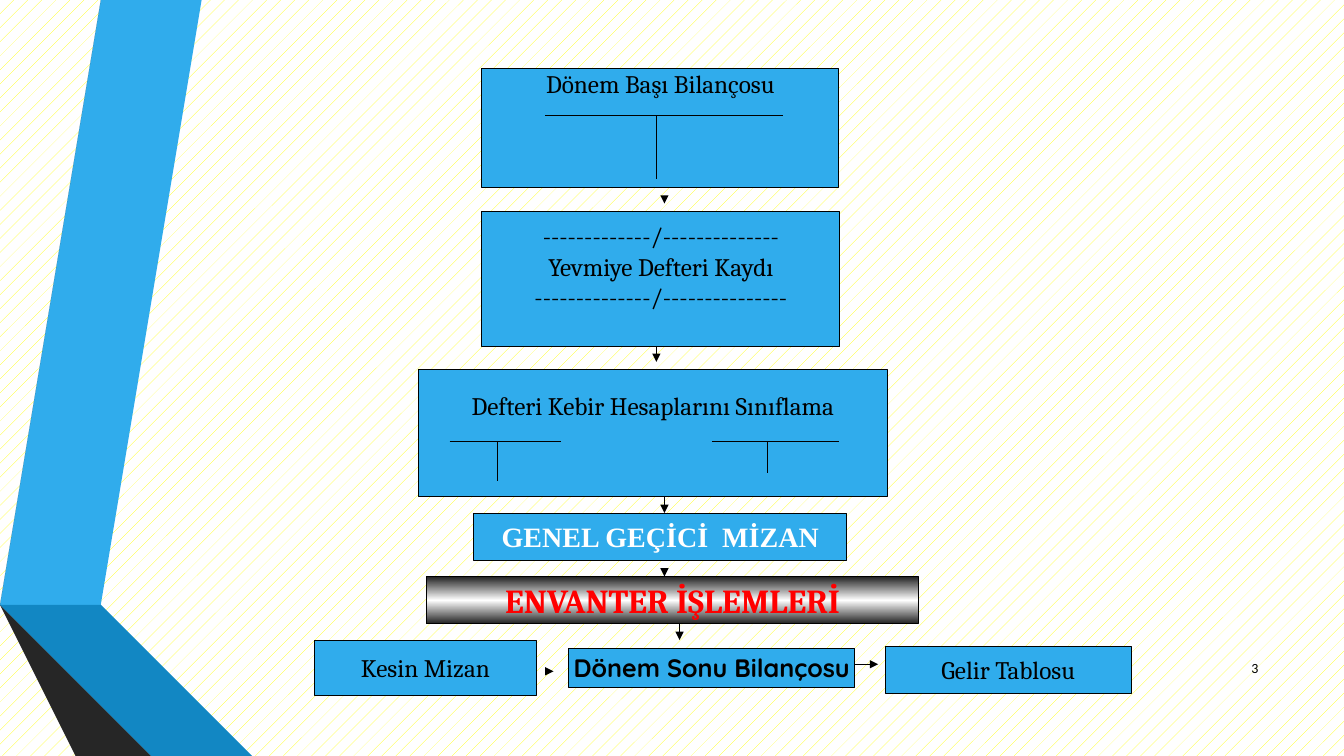
from copy import deepcopy
from dataclasses import dataclass

from pptx import Presentation
from pptx.dml.color import RGBColor
from pptx.enum.dml import MSO_PATTERN
from pptx.enum.shapes import MSO_CONNECTOR as CONN, MSO_SHAPE as SHAPE
from pptx.enum.text import MSO_ANCHOR as ANCHOR, PP_ALIGN as ALIGN
from pptx.oxml.ns import qn
from pptx.oxml.xmlchemy import OxmlElement
from pptx.util import Inches, Pt


@dataclass(frozen=True)
class Theme:
    blue: str = "30ACEC"
    mid_blue: str = "1287C3"
    deep_blue: str = "0C5A82"
    gray: str = "595959"
    dark_gray: str = "404040"
    charcoal: str = "262626"
    metal: str = "212121"
    black: str = "000000"
    white: str = "FFFFFF"
    red: str = "FF0000"
    yellow: str = "FFFF00"
    serif: str = "Cambria"
    roman: str = "Times New Roman"
    rounded: str = "Quicksand"
    sans: str = "Calibri"
    body: int = 18
    heading: int = 20
    banner: int = 24
    number: int = 10
    line: float = 0.75


T = Theme()
rgb = RGBColor.from_string


def set_font(p, size, face, color, bold=False):
    f = p.font
    f.size, f.name, f.bold = Pt(size), face, bold
    f.color.rgb = rgb(color)


def add_line(s, x1, y1, x2, y2, arrow=False):
    ln = s.shapes.add_connector(CONN.STRAIGHT, *map(Inches, (x1, y1, x2, y2)))
    ln.line.color.rgb = rgb(T.black)
    ln.line.width = Pt(T.line)
    if arrow:
        tail = OxmlElement("a:tailEnd")
        tail.set("type", "triangle")
        ln.line._get_or_add_ln().append(tail)
    ln._element.spPr.append(OxmlElement("a:effectLst"))


def add_box(s, box, lines, top=None, size=T.body, face=T.serif,
            color=T.black, bold=False):
    """Bordered box; text is centred, or starts `top` inches below the edge."""
    sp = s.shapes.add_shape(SHAPE.RECTANGLE, *map(Inches, box))
    sp.shadow.inherit = False
    sp.fill.solid()
    sp.fill.fore_color.rgb = rgb(T.blue)
    sp.line.color.rgb = rgb(T.black)
    sp.line.width = Pt(T.line)
    tf = sp.text_frame
    tf.word_wrap = False
    tf.vertical_anchor = ANCHOR.MIDDLE
    if top is not None:
        tf.vertical_anchor = ANCHOR.TOP
        tf.margin_top = Inches(top)
    for i, line in enumerate(lines):
        p = tf.add_paragraph() if i else tf.paragraphs[0]
        p.text, p.alignment = line, ALIGN.CENTER
        set_font(p, size, face, color, bold)
    return sp


def add_t_account(s, x, y, width, stem_x, height):
    """T-shaped ledger account with its bar starting at x, y."""
    add_line(s, x, y, x + width, y)
    add_line(s, x + stem_x, y, x + stem_x, y + height)


def add_ribbons(s):
    """Two folded ribbons down the left edge."""
    ribbons = [
        (T.blue, [(0.5, 5.78), (0.77, 5.83), (1.73, 0), (1.45, 0)]),
        (T.gray, [(1.39, 0), (1.11, 0), (0.16, 5.73), (0.44, 5.77)]),
        (T.charcoal, [(0.16, 5.73), (1.45, 7.5), (1.51, 7.5)]),
        (T.deep_blue, [(0.5, 5.79), (2.08, 7.5), (2.14, 7.5)]),
        (T.mid_blue, [(0.5, 5.78), (0.5, 5.79), (2.14, 7.5), (2.83, 7.5), (0.77, 5.83)]),
        (T.dark_gray, [(2.02, 7.5), (0.48, 5.83), (0.43, 5.77), (0.16, 5.73), (1.51, 7.5)]),
    ]
    for color, points in ribbons:
        fb = s.shapes.build_freeform(*points[0], scale=Inches(1))
        fb.add_line_segments(points[1:], close=True)
        sp = fb.convert_to_shape()
        sp.shadow.inherit = False
        sp.fill.solid()
        sp.fill.fore_color.rgb = rgb(color)
        sp.line.fill.background()


def add_opening_balance(s, x, y, w, h):
    add_box(s, (x, y, w, h), ["Dönem Başı Bilançosu"], top=0)
    add_t_account(s, x + 0.63, y + 0.47, 2.36, 1.1, 0.63)


def add_journal(s, x, y, w, h):
    entry = ["-" * 13 + "/" + "-" * 14, "Yevmiye Defteri Kaydı",
             "-" * 14 + "/" + "-" * 15]
    add_box(s, (x, y, w, h), entry, top=0.09)


def add_ledger(s, x, y, w, h):
    add_box(s, (x, y, w, h), ["Defteri Kebir Hesaplarını Sınıflama"], top=0.2)
    add_t_account(s, x + 0.31, y + 0.71, 1.1, 0.47, 0.39)
    add_t_account(s, x + 2.91, y + 0.71, 1.26, 0.55, 0.31)


def add_inventory_banner(s, x, y, w, h):
    sp = add_box(s, (x, y, w, h), ["ENVANTER İŞLEMLERİ"],
                 size=T.banner, color=T.red, bold=True)
    sp.fill.gradient()
    sp.fill.gradient_angle = 270
    stops = sp._element.spPr.find(qn("a:gradFill")).find(qn("a:gsLst"))
    stops.insert(1, deepcopy(stops[0]))
    colors = (T.metal, T.white, T.metal)
    for i, (stop, color) in enumerate(zip(sp.fill.gradient_stops, colors)):
        stop.position = i / 2
        stop.color.rgb = rgb(color)


def add_results(s, x, y):
    """Bottom row: final trial balance, closing balance, income statement."""
    add_box(s, (x, y, 2.2, 0.55), ["Kesin Mizan"])
    add_box(s, (x + 5.66, y + 0.06, 2.44, 0.47), ["Gelir Tablosu"])
    add_box(s, (x + 2.52, y + 0.08, 2.84, 0.39), ["Dönem Sonu Bilançosu"],
            face=T.rounded, bold=True)
    add_line(s, x + 2.29, y + 0.31, x + 2.37, y + 0.31, arrow=True)
    add_line(s, x + 5.36, y + 0.24, x + 5.59, y + 0.24, arrow=True)


def add_slide_number(s, x, y, w, h):
    tf = s.shapes.add_textbox(*map(Inches, (x, y, w, h))).text_frame
    tf.word_wrap = True
    tf.vertical_anchor = ANCHOR.MIDDLE
    p = tf.paragraphs[0]
    p.text, p.alignment = "3", ALIGN.RIGHT
    set_font(p, T.number, T.sans, T.black)


def add_flow_slide(prs):
    s = prs.slides.add_slide(prs.slide_layouts[6])
    bg = s.background.fill
    bg.patterned()
    bg.pattern = MSO_PATTERN.PERCENT_5
    bg.fore_color.rgb = rgb(T.yellow)
    bg.back_color.rgb = rgb(T.white)
    add_ribbons(s)

    # Accounting steps, top to bottom
    add_opening_balance(s, 4.78, 0.68, 3.54, 1.18)
    add_journal(s, 4.78, 2.1, 3.55, 1.34)
    add_ledger(s, 4.15, 3.67, 4.65, 1.26)
    add_box(s, (4.7, 5.09, 3.7, 0.47), ["GENEL GEÇİCİ  MİZAN"],
            size=T.heading, face=T.roman, color=T.white, bold=True)
    add_inventory_banner(s, 4.23, 5.72, 4.88, 0.47)
    add_results(s, 3.12, 6.35)

    # Downward arrows between the steps
    for x, y1, y2 in [(6.59, 1.94, 2.02), (6.51, 3.44, 3.59), (6.59, 4.93, 5.09),
                      (6.59, 5.64, 5.72), (6.74, 6.19, 6.35)]:
        add_line(s, x, y1, x, y2, arrow=True)
    add_slide_number(s, 11.98, 6.43, 0.6, 0.4)


def main():
    prs = Presentation()
    prs.slide_width, prs.slide_height = Inches(13.33), Inches(7.5)
    add_flow_slide(prs)
    prs.save("out.pptx")


if __name__ == "__main__":
    main()
